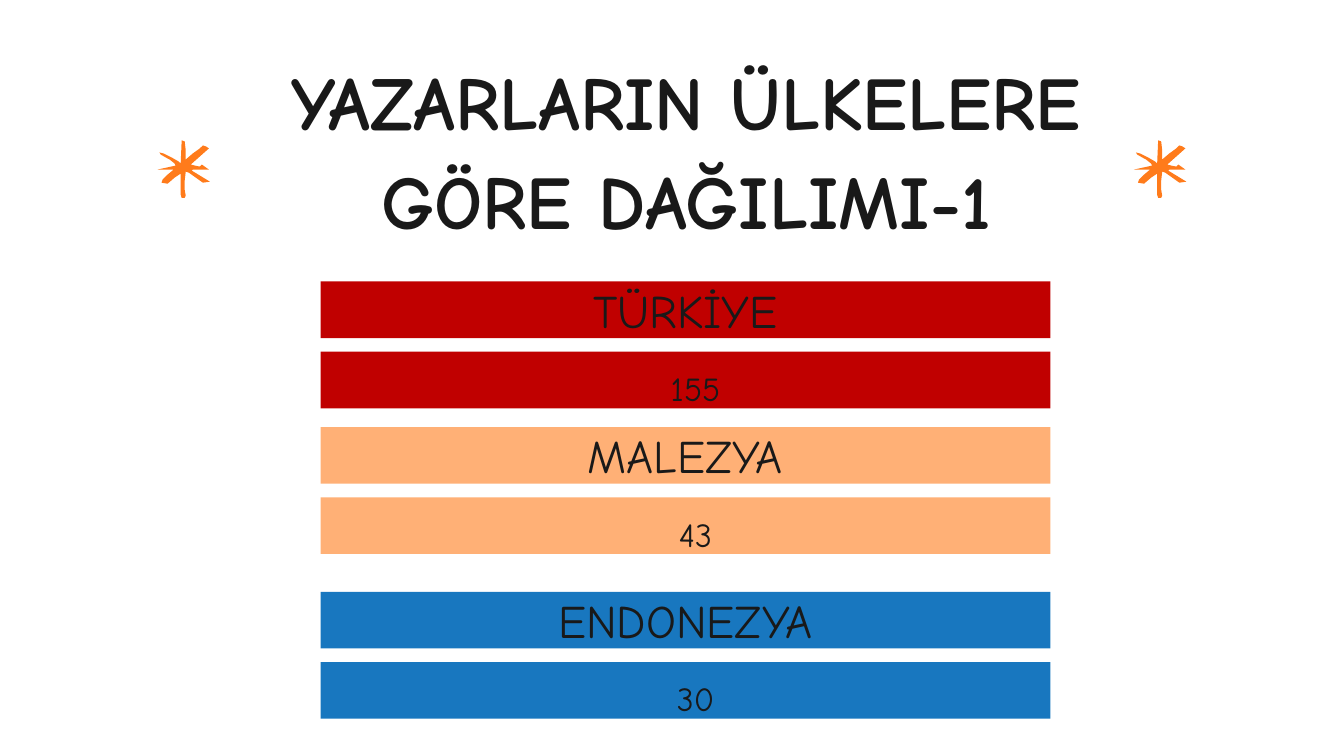
import pptx
import pptx.dml.color
import pptx.enum.shapes
import pptx.enum.text
import pptx.util

Pt = pptx.util.Pt
RGBColor = pptx.dml.color.RGBColor

INK = RGBColor(0x19, 0x19, 0x19)
RED = RGBColor(0xC0, 0x00, 0x00)
PEACH = RGBColor(0xFF, 0xB0, 0x76)
BLUE = RGBColor(0x18, 0x77, 0xBF)
ORANGE = RGBColor(0xFF, 0x7B, 0x1B)

FONT = {"name": "Comic Neue", "bold": False}
FRAME = {
    "margin_left": 0, "margin_right": 0, "margin_top": 0, "margin_bottom": 0,
    "word_wrap": True,
    "auto_size": pptx.enum.text.MSO_AUTO_SIZE.NONE,
    "vertical_anchor": pptx.enum.text.MSO_ANCHOR.TOP,
}
TITLE = {"size": Pt(54), "bold": True}
NAME = {"size": Pt(33.3)}
COUNT = {"size": Pt(24)}

BAR_LEFT, BAR_WIDTH = 229, 521.3
BAR_HEIGHT, BAR_GAP = 40.5, 9.7
COUNTRIES = [
    ("TÜRKİYE", "155", RED, 201),
    ("MALEZYA", "43", PEACH, 305),
    ("ENDONEZYA", "30", BLUE, 422.7),
]

SPARK_UNIT = 0.72
SPARK = [
    (24, 0), (27, 1), (28, 10), (28, 19), (35, 13), (42, 8), (45, 5), (48, 6),
    (51, 8), (33, 24), (37, 25), (42, 26), (44, 24), (51, 29), (35, 29),
    (34, 30), (52, 41), (45, 42), (38, 37), (31, 32), (28, 31), (27, 40),
    (27, 49), (28, 55), (27, 57), (24, 57), (23, 54), (23, 36), (23, 33),
    (17, 37), (10, 43), (4, 42), (5, 39), (10, 34), (16, 29), (0, 29),
    (18, 25), (17, 23), (12, 19), (10, 18), (3, 14), (2, 12), (6, 13),
    (14, 17), (21, 21), (23, 23),
]


def apply(target, values):
    for name, value in values.items():
        setattr(target, name, value)


def write(shape, text, look, spacing=1.0, indent=0):
    frame = shape.text_frame
    apply(frame, FRAME)
    frame.text = text
    para = frame.paragraphs[0]
    para.alignment = pptx.enum.text.PP_ALIGN.CENTER
    para.line_spacing = spacing
    if indent:
        props = para._p.get_or_add_pPr()
        props.set("marL", str(Pt(indent)))
        props.set("indent", "0")
    font = para.runs[0].font
    apply(font, FONT | look)
    font.color.rgb = INK


def paint(shape, color):
    shape.shadow.inherit = False
    shape.fill.solid()
    shape.fill.fore_color.rgb = color
    shape.line.fill.background()


def add_title(slide, left, top, width, height):
    title = slide.shapes.title
    apply(title, {"left": Pt(left), "top": Pt(top),
                  "width": Pt(width), "height": Pt(height)})
    write(title, "YAZARLARIN ÜLKELERE GÖRE DAĞILIMI-1", TITLE, 1.1)


def add_spark(slide, left, top):
    pen = slide.shapes.build_freeform(*SPARK[0], scale=Pt(SPARK_UNIT))
    pen.add_line_segments(SPARK[1:], close=True)
    paint(pen.convert_to_shape(Pt(left), Pt(top)), ORANGE)


def add_bar(group, left, top, width, color):
    bar = group.shapes.add_shape(
        pptx.enum.shapes.MSO_SHAPE.RECTANGLE,
        Pt(left), Pt(top), Pt(width), Pt(BAR_HEIGHT))
    paint(bar, color)
    return bar


def add_country(slide, left, top, width, name, count, color):
    """Stack a name bar above a count bar in one group."""
    group = slide.shapes.add_group_shape()
    low = top + BAR_HEIGHT + BAR_GAP
    write(add_bar(group, left, low, width, color), count, COUNT, 1.4, 14.4)
    write(add_bar(group, left, top, width, color), name, NAME)


def main():
    deck = pptx.Presentation()
    deck.slide_width, deck.slide_height = Pt(960), Pt(540)
    slide = deck.slides.add_slide(deck.slide_layouts.get_by_name("Title Only"))
    add_title(slide, 175, 32.4, 630, 144)
    for left in (112.5, 810):
        add_spark(slide, left, 100.3)
    for name, count, color, top in COUNTRIES:
        add_country(slide, BAR_LEFT, top, BAR_WIDTH, name, count, color)
    deck.save("out.pptx")


if __name__ == "__main__":
    main()
